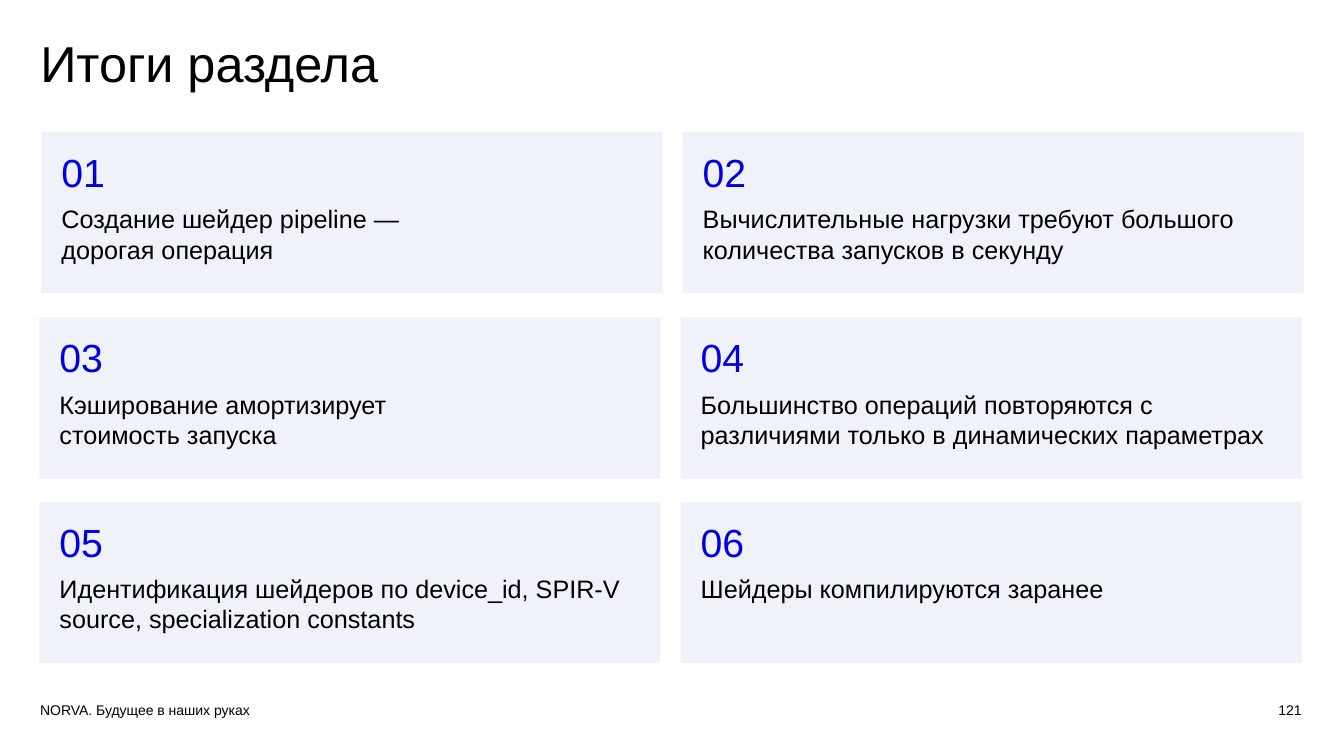
import pptx
import pptx.util
import pptx.dml.color
import pptx.enum.shapes
import pptx.enum.text

Inches = pptx.util.Inches
ALIGN = pptx.enum.text.PP_ALIGN

COLORS = {"text": "000000", "number": "0000E1", "card": "EFF2F9"}
FONT = "Arial"

TITLE = "Итоги раздела"
FOOTER = "NORVA. Будущее в наших руках"
PAGE_NUMBER = "121"
CONCLUSIONS = [
    "Создание шейдер pipeline —\nдорогая операция",
    "Вычислительные нагрузки требуют большого количества запусков в секунду",
    "Кэширование амортизирует\nстоимость запуска",
    "Большинство операций повторяются с различиями только в динамических параметрах",
    "Идентификация шейдеров по device_id, SPIR-V source, specialization constants",
    "Шейдеры компилируются заранее",
]

ROWS = [(0.41, 1.31), (0.39, 3.15), (0.39, 4.98)]
COLUMN_STEP = 6.36
CARD_SIZE = (6.16, 1.6)
CARD_MARGINS = (0.2, 0.16, 0.2, 0.2)


def rgb(name):
    """Return the named colour."""
    return pptx.dml.color.RGBColor.from_string(COLORS[name])


def apply_format(target, values):
    """Set every attribute in a dict of format values."""
    for name, value in values.items():
        setattr(target, name, value)


def write_para(para, text, size, color="text", **layout):
    """Write text into a paragraph and format it."""
    para.text = text
    apply_format(para, layout)
    for span in para.runs:
        apply_format(span.font, {"name": FONT, "size": pptx.util.Pt(size)})
        span.font.color.rgb = rgb(color)


def set_frame(frame, margins, wrap=True):
    """Set margins, wrapping and top anchoring of a text frame."""
    sides = ("margin_left", "margin_top", "margin_right", "margin_bottom")
    apply_format(frame, dict(zip(sides, map(Inches, margins))))
    apply_format(frame, {
        "word_wrap": wrap,
        "vertical_anchor": pptx.enum.text.MSO_ANCHOR.TOP,
    })


def add_label(page, place, margins, text, size, wrap=True, **layout):
    """Add a one-paragraph text box."""
    box = page.shapes.add_textbox(*map(Inches, place))
    set_frame(box.text_frame, margins, wrap)
    write_para(box.text_frame.paragraphs[0], text, size, **layout)


def add_card(page, index, text):
    """Add a numbered conclusion card at its grid position."""
    row, column = divmod(index, 2)
    left, top = ROWS[row]
    place = (left + column * COLUMN_STEP, top, *CARD_SIZE)
    card = page.shapes.add_shape(
        pptx.enum.shapes.MSO_SHAPE.RECTANGLE, *map(Inches, place))
    card.shadow.inherit = False
    card.fill.solid()
    card.fill.fore_color.rgb = rgb("card")
    card.line.fill.background()
    frame = card.text_frame
    set_frame(frame, CARD_MARGINS)
    write_para(frame.paragraphs[0], f"{index + 1:02d}", 28, "number",
               alignment=ALIGN.LEFT, space_after=pptx.util.Pt(6))
    write_para(frame.add_paragraph(), text, 18, alignment=ALIGN.LEFT)


def main():
    """Build the section summary slide."""
    deck = pptx.Presentation()
    apply_format(deck, {"slide_width": Inches(13.33), "slide_height": Inches(7.5)})
    page = deck.slides.add_slide(deck.slide_layouts[6])
    add_label(page, (0.3, 6.91, 2.3, 0.27), (0.1, 0.05, 0.1, 0.05),
              FOOTER, 10, wrap=False)
    add_label(page, (0.4, 0.34, 10.9, 0.83), (0, 0.05, 0.1, 0.05),
              TITLE, 36, line_spacing=0.9)
    add_label(page, (9.61, 6.91, 3.3, 0.4), (0.1, 0.05, 0, 0.05),
              PAGE_NUMBER, 10, alignment=ALIGN.RIGHT)
    for index, text in enumerate(CONCLUSIONS):
        add_card(page, index, text)
    deck.save("out.pptx")


if __name__ == "__main__":
    main()
